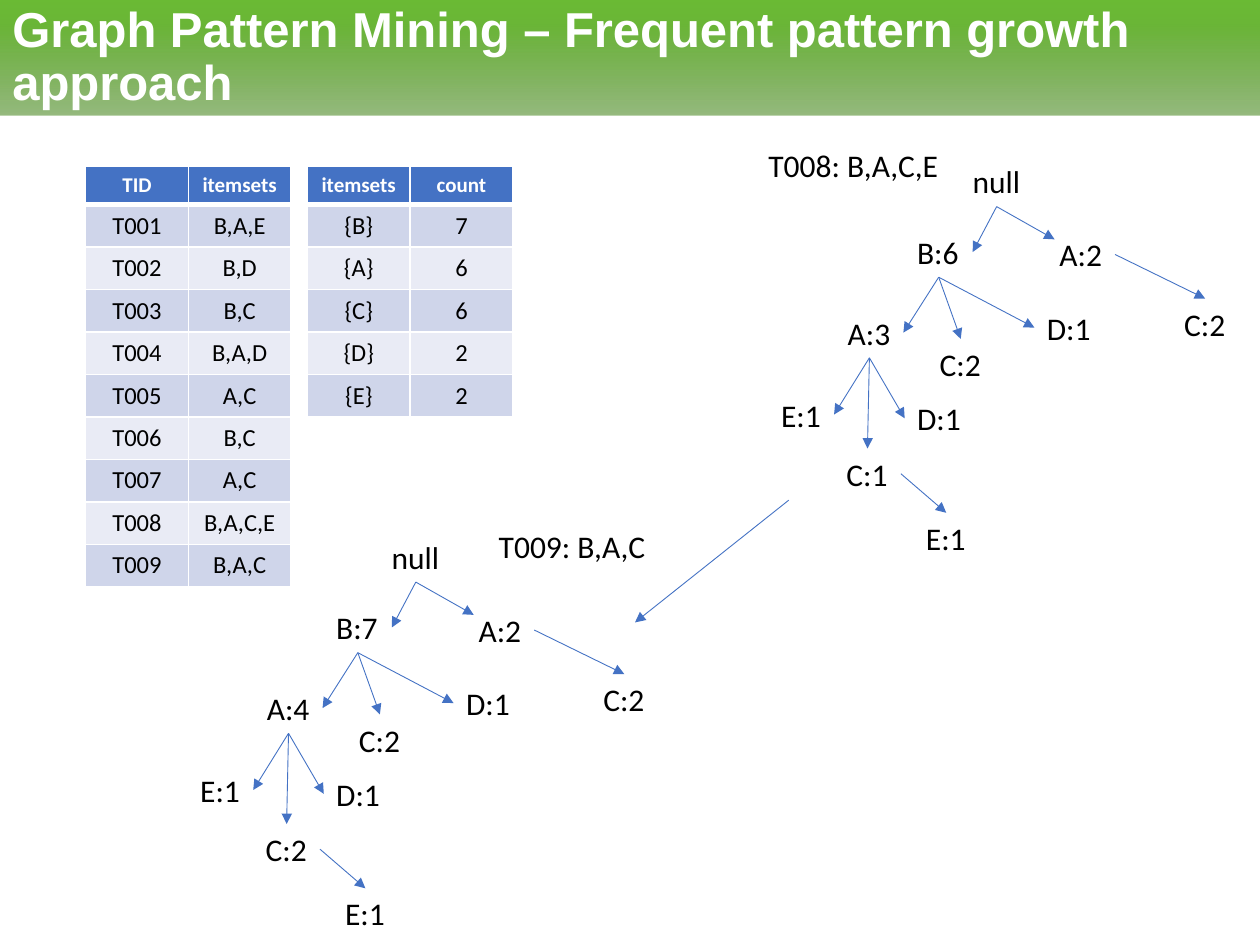
from lxml import etree
from pptx import Presentation
from pptx import util as u
from pptx.dml.color import RGBColor
from pptx.enum import shapes, text
from pptx.oxml import parse_xml
from pptx.oxml.ns import nsdecls, qn

BLUE = RGBColor(0x44, 0x72, 0xC4)
BAND_DARK = RGBColor(0xCF, 0xD5, 0xEA)
BAND_LIGHT = RGBColor(0xE9, 0xEB, 0xF5)
WHITE = RGBColor(0xFF, 0xFF, 0xFF)
BLACK = RGBColor(0, 0, 0)
HEADING_STOPS = [(0, "518D2A", 60), (80, "6AB636", 60 / 60 * 100), (100, "6ABA34", 100)]

HEADING = "Graph Pattern Mining – Frequent pattern growth approach"
TRANSACTIONS = [
    ("TID", "itemsets"), ("T001", "B,A,E"), ("T002", "B,D"), ("T003", "B,C"),
    ("T004", "B,A,D"), ("T005", "A,C"), ("T006", "B,C"), ("T007", "A,C"),
    ("T008", "B,A,C,E"), ("T009", "B,A,C"),
]
COUNTS = [("itemsets", "count"), ("{B}", "7"), ("{A}", "6"), ("{C}", "6"),
          ("{D}", "2"), ("{E}", "2")]

# Node: (left, top) measured from the root's corner
NODES = {
    "null": (0, 0), "B": (-0.44, 0.56), "A": (0.69, 0.58), "AC": (1.68, 1.13),
    "BA": (-0.99, 1.2), "BC": (-0.26, 1.45), "BD": (0.59, 1.16),
    "BAE": (-1.52, 1.85), "BAC": (-1.0, 2.32), "BAD": (-0.44, 1.88),
    "BACE": (-0.37, 2.83),
}
WIDTHS = {"n": 0.58, "A": 0.54, "B": 0.54, "C": 0.53, "D": 0.55, "E": 0.52}
NODE_HEIGHT = 0.4
TOP, LEFT, BOTTOM, RIGHT = range(4)
# Edge: parent, side it leaves, child, side it reaches (None: a free end)
EDGES = [
    ("null", BOTTOM, "B", RIGHT), ("null", BOTTOM, "A", None),
    ("A", RIGHT, "AC", TOP), ("B", BOTTOM, "BA", RIGHT),
    ("B", BOTTOM, "BC", TOP), ("B", BOTTOM, "BD", LEFT),
    ("BA", BOTTOM, "BAE", RIGHT), ("BA", BOTTOM, "BAC", TOP),
    ("BA", BOTTOM, "BAD", LEFT), ("BAC", RIGHT, "BACE", TOP),
]
FREE_END = (0.06, 0.08)  # from the child's corner
SHARED_COUNTS = {"A": 2, "AC": 2, "BC": 2, "BD": 1, "BAE": 1, "BAD": 1, "BACE": 1}
TREES = [  # root corner, counts, caption, caption box
    ((7.62, 1.24), {"B": 6, "BA": 3, "BAC": 1}, "T008: B,A,C,E", (6, 1.11, 1.56, 0.4)),
    ((3.01, 4.22), {"B": 7, "BA": 4, "BAC": 2}, "T009: B,A,C", (3.86, 4.13, 1.38, 0.4)),
]


def write(frame, words, size=18, font="Calibri", color=BLACK, bold=False,
          align=text.PP_ALIGN.LEFT, spacing=None):
    paragraph = frame.paragraphs[0]
    paragraph.alignment = align
    paragraph.line_spacing = spacing
    run = paragraph.add_run()
    run.text = words
    run.font.size, run.font.name, run.font.bold = u.Pt(size), font, bold
    run.font.color.rgb = color


def add_label(parent, words, box):
    label = parent.add_textbox(*map(u.Inches, box))
    label.text_frame.word_wrap = False
    label.text_frame.auto_size = text.MSO_AUTO_SIZE.SHAPE_TO_FIT_TEXT
    write(label.text_frame, words)
    return label


def add_arrow(parent, start, end):
    arrow = parent.add_connector(shapes.MSO_CONNECTOR.STRAIGHT, *start, *end)
    arrow.line.color.rgb = BLUE
    arrow.line.width = u.Pt(0.5)
    line = arrow.line._get_or_add_ln()
    etree.SubElement(line, qn("a:tailEnd"), type="triangle")
    etree.SubElement(arrow._element.spPr, qn("a:effectLst"))
    return arrow


def add_heading(slide):
    bar = slide.shapes.add_shape(shapes.MSO_SHAPE.RECTANGLE, 0, 0, u.Inches(10), u.Inches(0.92))
    bar.shadow.inherit = False
    bar.line.fill.background()
    stops = "".join(
        f'<a:gs pos="{pos * 1000}"><a:srgbClr val="{color}">'
        f'<a:alpha val="{int(alpha * 1000)}"/></a:srgbClr></a:gs>'
        for pos, color, alpha in HEADING_STOPS)
    geometry = bar._element.spPr.find(qn("a:prstGeom"))
    geometry.addnext(parse_xml(
        f'<a:gradFill {nsdecls("a")} rotWithShape="1"><a:gsLst>{stops}</a:gsLst>'
        '<a:lin ang="16200000" scaled="0"/></a:gradFill>'))
    bar.text_frame.word_wrap = True
    bar.text_frame.vertical_anchor = text.MSO_ANCHOR.MIDDLE
    write(bar.text_frame, HEADING, size=28, font="Arial", color=WHITE, bold=True, spacing=0.9)


def set_borders(cell, **points):
    """Draw white borders; points gives the width of each side (L, R, T, B)."""
    properties = cell._tc.get_or_add_tcPr()
    for place, (side, width) in enumerate(points.items()):
        properties.insert(place, parse_xml(
            f'<a:ln{side} {nsdecls("a")} w="{u.Pt(width)}"><a:solidFill>'
            f'<a:srgbClr val="{WHITE}"/></a:solidFill></a:ln{side}>'))


def add_grid(slide, rows, left, top=1.32, column=0.815, header=0.28, row_height=0.31):
    height = header + row_height * (len(rows) - 1)
    grid = slide.shapes.add_table(len(rows), 2, *map(u.Inches, (left, top, 2 * column, height))).table
    for r, row in enumerate(rows):
        grid.rows[r].height = u.Inches(row_height if r else header)
        for c, words in enumerate(row):
            cell = grid.cell(r, c)
            cell.fill.solid()
            cell.fill.fore_color.rgb = (BAND_DARK if r % 2 else BAND_LIGHT) if r else BLUE
            set_borders(cell, L=1, R=1, T=3 if r == 1 else 1, B=1 if r else 3)
            write(cell.text_frame, words, size=14 if r else 12, bold=r == 0,
                  color=BLACK if r else WHITE, align=text.PP_ALIGN.CENTER)


def add_tree(slide, root, counts):
    tree = slide.shapes.add_group_shape().shapes
    nodes = {}
    for name, (dx, dy) in NODES.items():
        words = f"{name[-1]}:{counts[name]}" if name in counts else name
        box = (root[0] + dx, root[1] + dy, WIDTHS[words[0]], NODE_HEIGHT)
        nodes[name] = add_label(tree, words, box)
    for parent, start_side, child, end_side in EDGES:
        start, end = nodes[parent], nodes[child]
        target = [end.left + u.Inches(FREE_END[0]), end.top + u.Inches(FREE_END[1])]
        arrow = add_arrow(tree, (start.left, start.top), target)
        arrow.begin_connect(start, start_side)
        if end_side is not None:
            arrow.end_connect(end, end_side)


def main():
    deck = Presentation()
    deck.slide_width, deck.slide_height = u.Inches(10), u.Inches(7.5)
    slide = deck.slides.add_slide(deck.slide_layouts[6])
    add_heading(slide)
    add_grid(slide, COUNTS, left=2.44)
    add_grid(slide, TRANSACTIONS, left=0.68)
    for root, counts, caption, caption_box in TREES:
        add_label(slide.shapes, caption, caption_box)
        add_tree(slide, root, {**SHARED_COUNTS, **counts})
    add_arrow(slide.shapes, (u.Inches(6.26), u.Inches(3.97)), (u.Inches(5.04), u.Inches(4.94)))
    deck.save("out.pptx")


if __name__ == "__main__":
    main()
